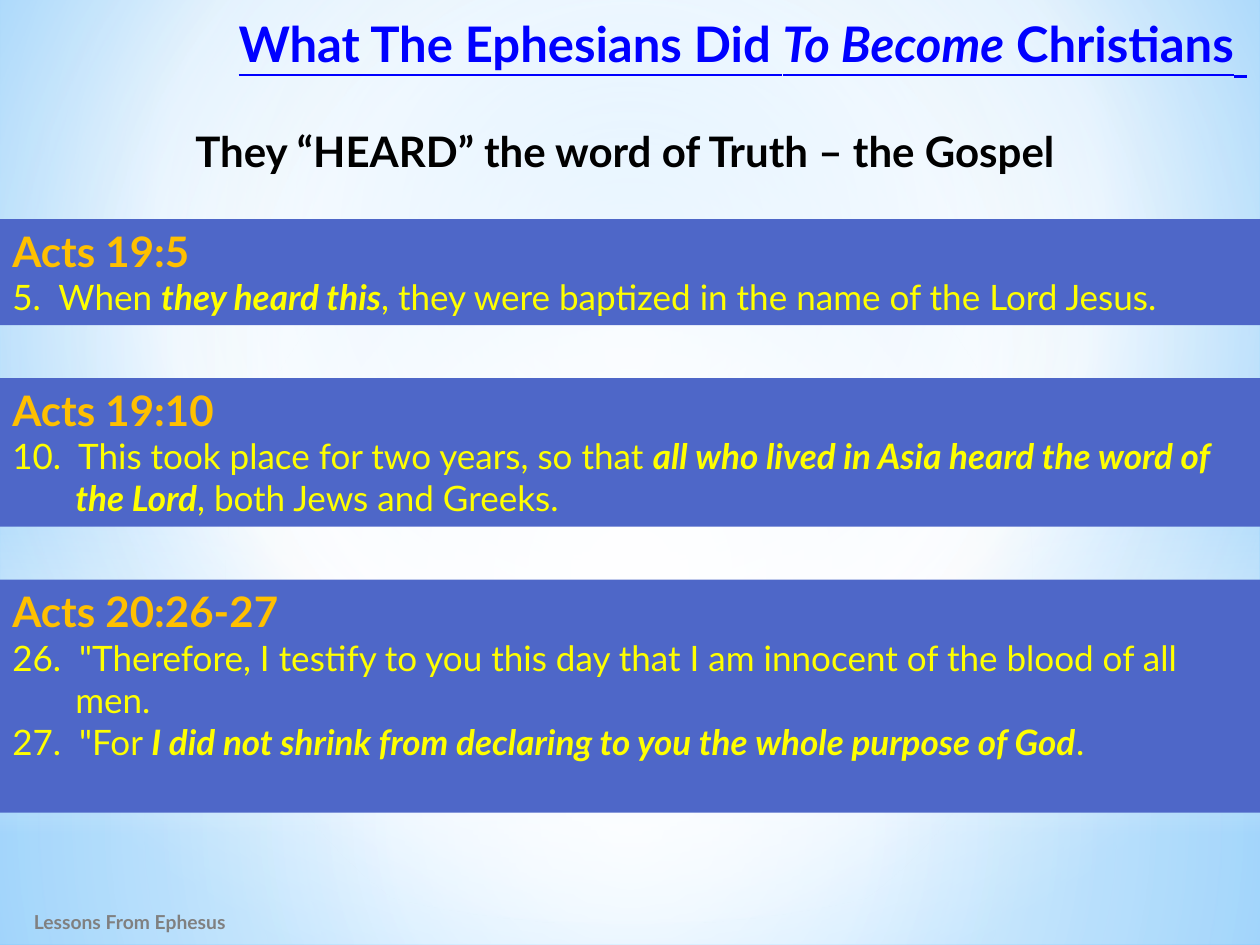
import pptx
import pptx.util
import pptx.oxml
import pptx.oxml.ns
import pptx.dml.color
import pptx.enum.shapes
import pptx.enum.text

Inches = pptx.util.Inches
Align = pptx.enum.text.PP_ALIGN
Anchor = pptx.enum.text.MSO_ANCHOR
Shape = pptx.enum.shapes.MSO_SHAPE

COLORS = {
    "title": "0000FF", "heading": "000000", "band": "4E67C8", "reference": "FFC000",
    "verse": "FFFF00", "footer": "808080", "white": "FFFFFF", "pale": "B4DCFA",
    "sky": "9ED5FF", "deep": "5BB9FF",
}
CENTER = (50, 50, 50, 50)
BACKDROP = [(0, "sky", 100), (60, "white", 100), (100, "deep", 100)]
GLOWS = [
    (Shape.RECTANGLE, (0, 5.58, 10, 1.92), [(0, "white", 91), (37, "white", 76), (100, "pale", 79)], CENTER),
    (Shape.RECTANGLE, (0, 0, 10, 5.58), [(0, "white", 89), (48, "white", 62), (100, "pale", 79)], CENTER),
    (Shape.RECTANGLE, (0, 4.12, 10, 2.5),
     [(0, "white", 0), (29, "white", 30), (45, "pale", 40), (55, "white", 26),
      (65, "pale", 60), (100, "white", 0)], None),
    (Shape.OVAL, (0, 1.75, 10, 5.58), [(0, "white", 100), (56, "white", 0)], CENTER),
]

TITLE = {"size": 28, "color": "title", "bold": True, "underline": True}
HEADING = {"size": 24, "color": "heading", "bold": True}
FOOTER = {"size": 11, "color": "footer", "bold": True}
REFERENCE = {"size": 24, "color": "reference", "bold": True}
VERSE = {"size": 20, "color": "verse", "bold": False}
STRONG = VERSE | {"bold": True, "italic": True}

BANDS = [
    (1.74, 0.84, "Acts 19:5",
     [[("5.  When ", VERSE), ("they heard this", STRONG),
       (", they were baptized in the name of the Lord Jesus.", VERSE)]]),
    (3, 1.18, "Acts 19:10",
     [[("10.  This took place for two years, so that ", VERSE),
       ("all who lived in Asia heard the word of the Lord", STRONG),
       (", both Jews and Greeks.", VERSE)]]),
    (4.6, 1.85, "Acts 20:26-27",
     [[('26.  "Therefore, I testify to you this day that I am innocent of the blood of all men.', VERSE)],
      [('27.  "For ', VERSE),
       ("I did not shrink from declaring to you the whole purpose of God", STRONG), (".", VERSE)]]),
]


class SlideBuilder:
    """Hold the type style and the current slide, and add each kind of element."""

    font = "Lato"
    hanging = Inches(0.5)

    def __init__(self, deck):
        self.page = deck.slides.add_slide(deck.slide_layouts[5])

    def gradient(self, fill, element, stops, focus):
        fill.gradient()
        old = element.xpath(".//a:gradFill")[0]
        marks = "".join(
            f'<a:gs pos="{place * 1000}"><a:srgbClr val="{COLORS[color]}">'
            f'<a:alpha val="{alpha * 1000}"/></a:srgbClr></a:gs>'
            for place, color, alpha in stops)
        course = '<a:lin ang="5400000" scaled="0"/>'
        if focus:
            sides = " ".join(f'{side}="{value * 1000}"' for side, value in zip("ltrb", focus))
            course = f'<a:path path="circle"><a:fillToRect {sides}/></a:path>'
        new = pptx.oxml.parse_xml(
            f'<a:gradFill {pptx.oxml.ns.nsdecls("a")} rotWithShape="1">'
            f'<a:gsLst>{marks}</a:gsLst>{course}</a:gradFill>')
        old.getparent().replace(old, new)

    def backdrop(self, stops, focus):
        self.gradient(self.page.background.fill, self.page.element, stops, focus)

    def shape(self, kind, place):
        shape = self.page.shapes.add_shape(kind, *map(Inches, place))
        shape.shadow.inherit = False
        shape.line.fill.background()
        return shape

    def glow(self, kind, place, stops, focus):
        shape = self.shape(kind, place)
        self.gradient(shape.fill, shape.element, stops, focus)

    def fill_text(self, box, lines, align=Align.LEFT, anchor=Anchor.TOP, hang=False):
        frame = box.text_frame
        settings = {"word_wrap": True, "vertical_anchor": anchor,
                    "auto_size": pptx.enum.text.MSO_AUTO_SIZE.NONE}
        for name, value in settings.items():
            setattr(frame, name, value)
        for index, spans in enumerate(lines):
            para = frame.add_paragraph() if index else frame.paragraphs[0]
            para.alignment = align
            if hang:
                properties = para._p.get_or_add_pPr()
                properties.set("marL", str(self.hanging))
                properties.set("indent", str(-self.hanging))
            for text, style in spans:
                self.span(para, text, style)

    def span(self, para, text, style):
        span = para.add_run()
        span.text = text
        values = {"name": self.font, "italic": False} | style
        values["size"] = pptx.util.Pt(values["size"])
        color = COLORS[values.pop("color")]
        for name, value in values.items():
            setattr(span.font, name, value)
        span.font.color.rgb = pptx.dml.color.RGBColor.from_string(color)

    def title(self, place, spans):
        title = self.page.shapes.title
        for name, value in zip(("left", "top", "width", "height"), place):
            setattr(title, name, Inches(value))
        title.element.getparent().append(title.element)
        self.fill_text(title, [spans], align=Align.RIGHT)

    def text(self, place, spans, **layout):
        box = self.page.shapes.add_textbox(*map(Inches, place))
        self.fill_text(box, [spans], **layout)

    def band(self, top, height, reference, verses):
        band = self.shape(Shape.RECTANGLE, (0, top, 10, height))
        band.fill.solid()
        band.fill.fore_color.rgb = pptx.dml.color.RGBColor.from_string(COLORS["band"])
        self.fill_text(band, [[(reference, REFERENCE)], *verses], hang=True)


def main():
    deck = pptx.Presentation()
    deck.slide_width, deck.slide_height = Inches(10), Inches(7.5)
    builder = SlideBuilder(deck)
    builder.backdrop(BACKDROP, (20, 10, 20, 60))
    for glow in GLOWS:
        builder.glow(*glow)
    builder.text((0.17, 7.12, 3.67, 0.4), [("Lessons From Ephesus", FOOTER)], anchor=Anchor.MIDDLE)
    builder.title((0, 0, 10, 0.67), [
        ("What The Ephesians Did ", TITLE),
        ("To Become", TITLE | {"italic": True}),
        (" Christians", TITLE),
        (" ", TITLE | {"size": 32}),
    ])
    builder.text((0, 0.95, 10, 0.5), [("They “HEARD” the word of Truth – the Gospel ", HEADING)],
                 align=Align.CENTER, hang=True)
    for band in BANDS:
        builder.band(*band)
    deck.save("out.pptx")


if __name__ == "__main__":
    main()
